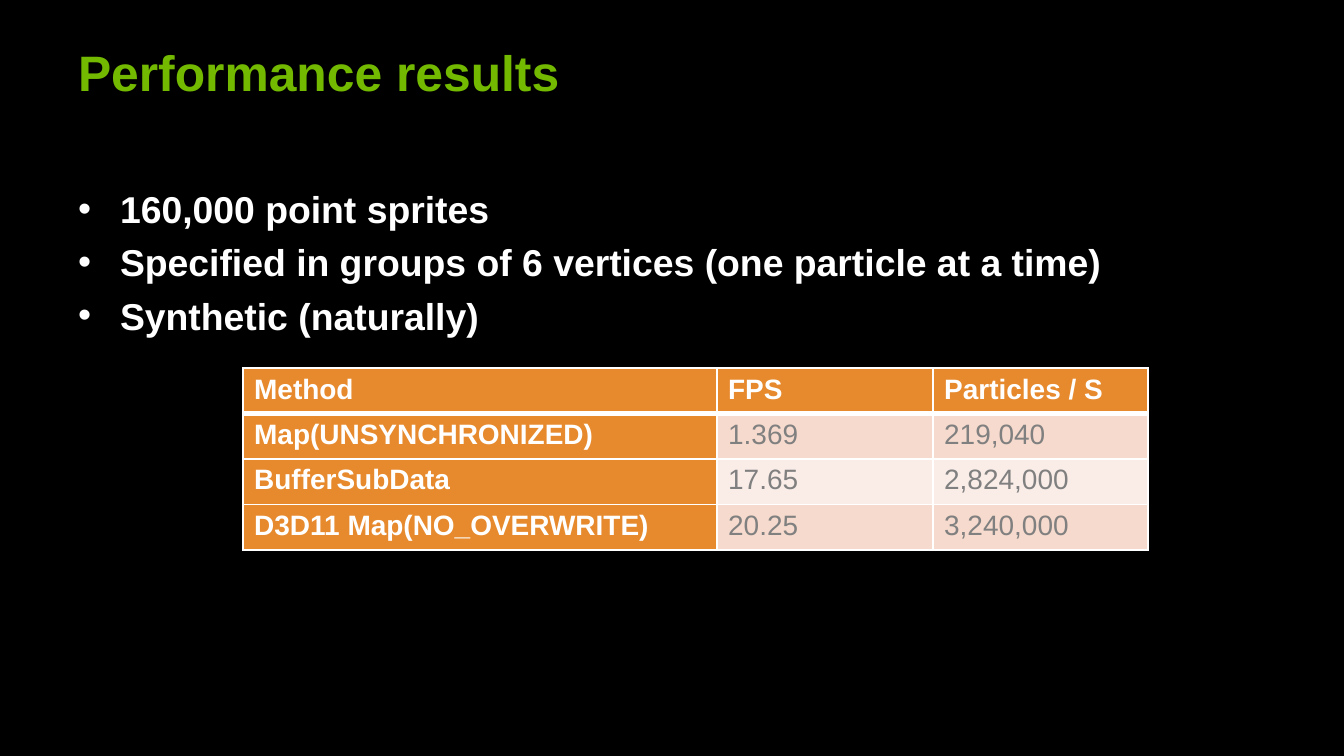
"""Build the performance results slide with its bullets and results table."""
from pptx import Presentation
from pptx.dml.color import RGBColor
from pptx.oxml import parse_xml
from pptx.oxml.ns import nsdecls
from pptx.util import Pt

SCALE = 914400 / 112
WHITE, GREEN, GRAY, ORANGE = "FFFFFF", "73B900", "808080", "E78A2D"
BANDS = ["F6DACD", "FAEDE8"]


def px(length):
    return round(length * SCALE)


def write(para, text, size, color=WHITE, bold=True):
    span = para.add_run()
    span.text = text
    span.font.name = "Arial"
    span.font.size = Pt(size)
    span.font.bold = bold
    span.font.color.rgb = RGBColor.from_string(color)


deck = Presentation()
deck.slide_width, deck.slide_height = px(1344), px(756)
page = deck.slides.add_slide(deck.slide_layouts[6])
page.background.fill.solid()
page.background.fill.fore_color.rgb = RGBColor.from_string("000000")

title = page.shapes.add_textbox(px(67), px(30), px(1128), px(71)).text_frame
title.word_wrap = True
title.margin_top = px(12)
write(title.paragraphs[0], "Performance results", 32, GREEN)

body = page.shapes.add_textbox(px(67), px(176), px(1230), px(521)).text_frame
body.word_wrap = True
body.margin_top = px(10)
bullets = [
    "160,000 point sprites",
    "Specified in groups of 6 vertices (one particle at a time)",
    "Synthetic (naturally)",
]
for index, text in enumerate(bullets):
    para = body.add_paragraph() if index else body.paragraphs[0]
    properties = para._p.get_or_add_pPr()
    properties.set("marL", str(px(42)))
    properties.set("indent", str(-px(42)))
    for tag in (
        f'<a:buClr {nsdecls("a")}><a:srgbClr val="{WHITE}"/></a:buClr>',
        f'<a:buFont {nsdecls("a")} typeface="Arial"/>',
        f'<a:buChar {nsdecls("a")} char="•"/>',
    ):
        properties.append(parse_xml(tag))
    if index:
        para.space_before = Pt(5.5)
    write(para, text, 24)

results = [
    ["Method", "FPS", "Particles / S"],
    ["Map(UNSYNCHRONIZED)", "1.369", "219,040"],
    ["BufferSubData", "17.65", "2,824,000"],
    ["D3D11 Map(NO_OVERWRITE)", "20.25", "3,240,000"],
]
widths = [474, 216, 215]
table = page.shapes.add_table(
    len(results), len(widths), px(243), px(368), px(sum(widths)), px(182)
).table
for column, width in zip(table.columns, widths):
    column.width = px(width)

for row, values in enumerate(results):
    for col, text in enumerate(values):
        cell = table.cell(row, col)
        heading = row == 0 or col == 0
        write(cell.text_frame.paragraphs[0], text, 18, WHITE if heading else GRAY, heading)
        properties = cell._tc.get_or_add_tcPr()
        for side in ("lnL", "lnR", "lnT", "lnB"):
            thick = (row, side) in ((0, "lnB"), (1, "lnT"))
            properties.append(parse_xml(
                f'<a:{side} {nsdecls("a")} w="{Pt(3 if thick else 1)}"><a:solidFill>'
                f'<a:srgbClr val="{WHITE}"/></a:solidFill></a:{side}>'
            ))
        cell.fill.solid()
        cell.fill.fore_color.rgb = RGBColor.from_string(ORANGE if heading else BANDS[(row - 1) % 2])

deck.save("out.pptx")
